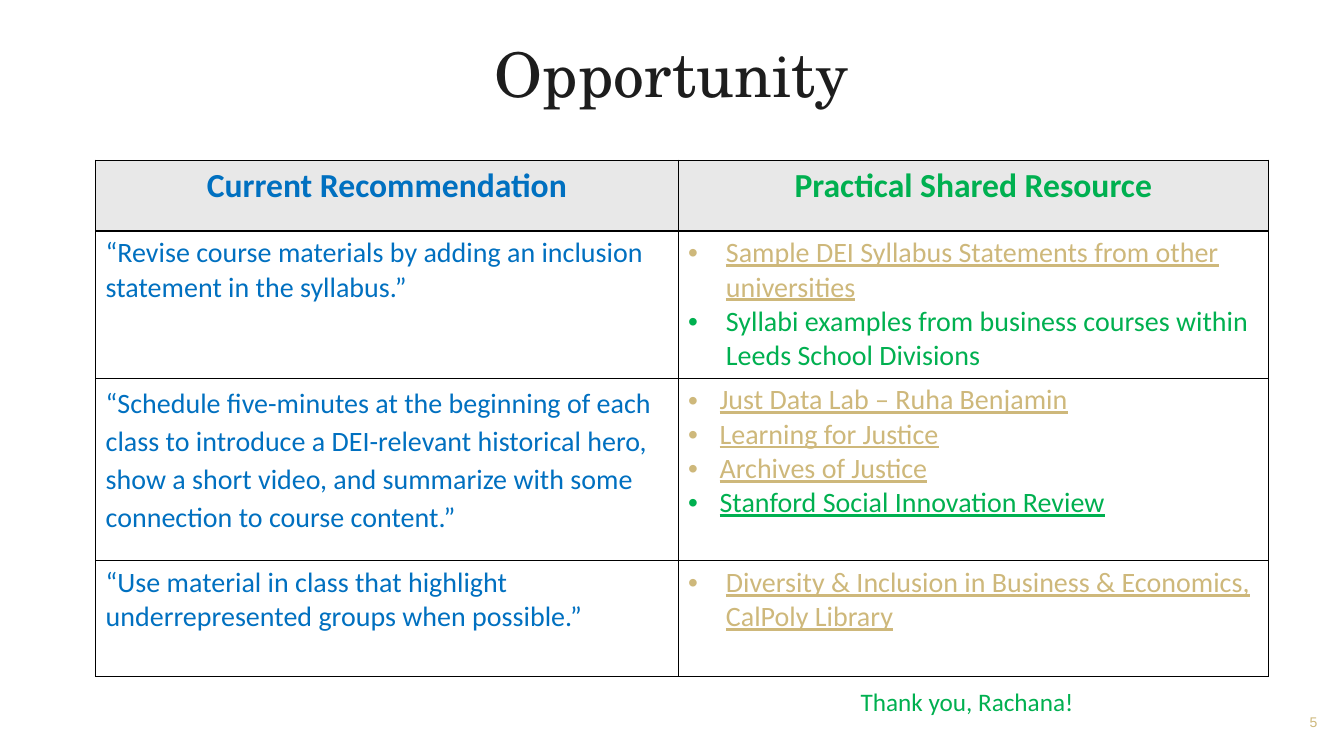
from lxml import etree
from pptx import Presentation
from pptx.dml.color import RGBColor
from pptx.enum import text as t
from pptx.oxml.ns import qn
from pptx.util import Cm, Pt

INK = RGBColor(0x1D, 0x1D, 0x1D)
BLACK = RGBColor(0, 0, 0)
GREY = RGBColor(0xE8, 0xE8, 0xE8)
BLUE = RGBColor(0x00, 0x70, 0xC0)
GREEN = RGBColor(0x00, 0xB0, 0x50)
GOLD = RGBColor(0xCE, 0xB8, 0x7B)

HEADS = [("Current Recommendation", BLUE), ("Practical Shared Resource", GREEN)]
# Advice, bullet indent in cm, then (resource, colour, underlined)
ROWS = [
    ("“Revise course materials by adding an inclusion statement in the syllabus.”", 0.95, [
        ("Sample DEI Syllabus Statements from other universities", GOLD, True),
        ("Syllabi examples from business courses within Leeds School Divisions", GREEN, False)]),
    ("“Schedule five-minutes at the beginning of each class to introduce a "
     "DEI-relevant historical hero, show a short video, and summarize with some "
     "connection to course content.”", 0.79, [
        ("Just Data Lab – Ruha Benjamin", GOLD, True),
        ("Learning for Justice", GOLD, True),
        ("Archives of Justice", GOLD, True),
        ("Stanford Social Innovation Review", GREEN, True)]),
    ("“Use material in class that highlight underrepresented groups when possible.”", 0.95, [
        ("Diversity & Inclusion in Business & Economics, CalPoly Library", GOLD, True)]),
]
WIDTHS = [14.68, 14.88]
HEIGHTS = [1.78, 3.71, 4.6, 2.92]


def style(para, size, color, face="Calibri", bold=False, line=False):
    font = para.font
    font.name, font.size, font.bold = face, Pt(size), bold
    font.color.rgb = color
    font.underline = line


def bullet(para, indent):
    props = para._p.get_or_add_pPr()
    props.set("marL", str(Cm(indent)))
    props.set("indent", str(-Cm(indent)))
    etree.SubElement(props, qn("a:buFont")).set("typeface", "Arial")
    etree.SubElement(props, qn("a:buChar")).set("char", "•")


def border(cell):
    props = cell._tc.get_or_add_tcPr()
    for i, side in enumerate(("lnL", "lnR", "lnT", "lnB")):
        line = etree.Element(qn("a:" + side), w=str(Pt(1)))
        fill = etree.SubElement(line, qn("a:solidFill"))
        etree.SubElement(fill, qn("a:srgbClr")).set("val", str(BLACK))
        props.insert(i, line)


def add_title(slide, left, top, width, height):
    title = slide.shapes.title
    title.left, title.top, title.width, title.height = left, top, width, height
    frame = title.text_frame
    frame.text = "Opportunity"
    frame.vertical_anchor = t.MSO_ANCHOR.MIDDLE
    para = frame.paragraphs[0]
    para.alignment = t.PP_ALIGN.CENTER
    para.line_spacing = 0.9
    style(para, 44, INK, "TeX Gyre Schola")


def add_grid(slide, left, top):
    grid = slide.shapes.add_table(len(HEIGHTS), len(WIDTHS), left, top,
                                  Cm(sum(WIDTHS)), Cm(sum(HEIGHTS))).table
    for col, width in zip(grid.columns, WIDTHS):
        col.width = Cm(width)
    for row, height in zip(grid.rows, HEIGHTS):
        row.height = Cm(height)
    for cell in grid.iter_cells():
        cell.fill.background()
        border(cell)

    for i, (head, color) in enumerate(HEADS):
        cell = grid.cell(0, i)
        cell.fill.solid()
        cell.fill.fore_color.rgb = GREY
        cell.text = head
        para = cell.text_frame.paragraphs[0]
        para.alignment = t.PP_ALIGN.CENTER
        style(para, 24, color, bold=True)

    for i, (advice, indent, items) in enumerate(ROWS, 1):
        cell = grid.cell(i, 0)
        cell.text = advice
        style(cell.text_frame.paragraphs[0], 20, BLUE)
        frame = grid.cell(i, 1).text_frame
        frame.text = "\n".join(item[0] for item in items)
        for para, (_, color, line) in zip(frame.paragraphs, items):
            bullet(para, indent)
            style(para, 20, color, line=line)
    grid.cell(2, 0).text_frame.paragraphs[0].line_spacing = 1.11


def add_note(slide, words, left, top, width, height, wrap=False):
    frame = slide.shapes.add_textbox(left, top, width, height).text_frame
    frame.word_wrap = wrap
    frame.text = words
    return frame


def main():
    deck = Presentation()
    deck.slide_width, deck.slide_height = Cm(33.87), Cm(19.05)
    slide = deck.slides.add_slide(deck.slide_layouts[5])
    add_title(slide, Cm(1.35), Cm(1.02), Cm(31.17), Cm(1.88))
    add_grid(slide, Cm(2.41), Cm(4.04))

    thanks = add_note(slide, "Thank you, Rachana!", Cm(21.44), Cm(17.17), Cm(6.15), Cm(1.02))
    thanks.auto_size = t.MSO_AUTO_SIZE.SHAPE_TO_FIT_TEXT
    style(thanks.paragraphs[0], 18, GREEN)

    number = add_note(slide, "5", Cm(31.98), Cm(17.68), Cm(1.47), Cm(1.02), True)
    number.vertical_anchor = t.MSO_ANCHOR.MIDDLE
    number.paragraphs[0].alignment = t.PP_ALIGN.RIGHT
    style(number.paragraphs[0], 10, GOLD, "Arial")
    deck.save("out.pptx")


if __name__ == "__main__":
    main()
